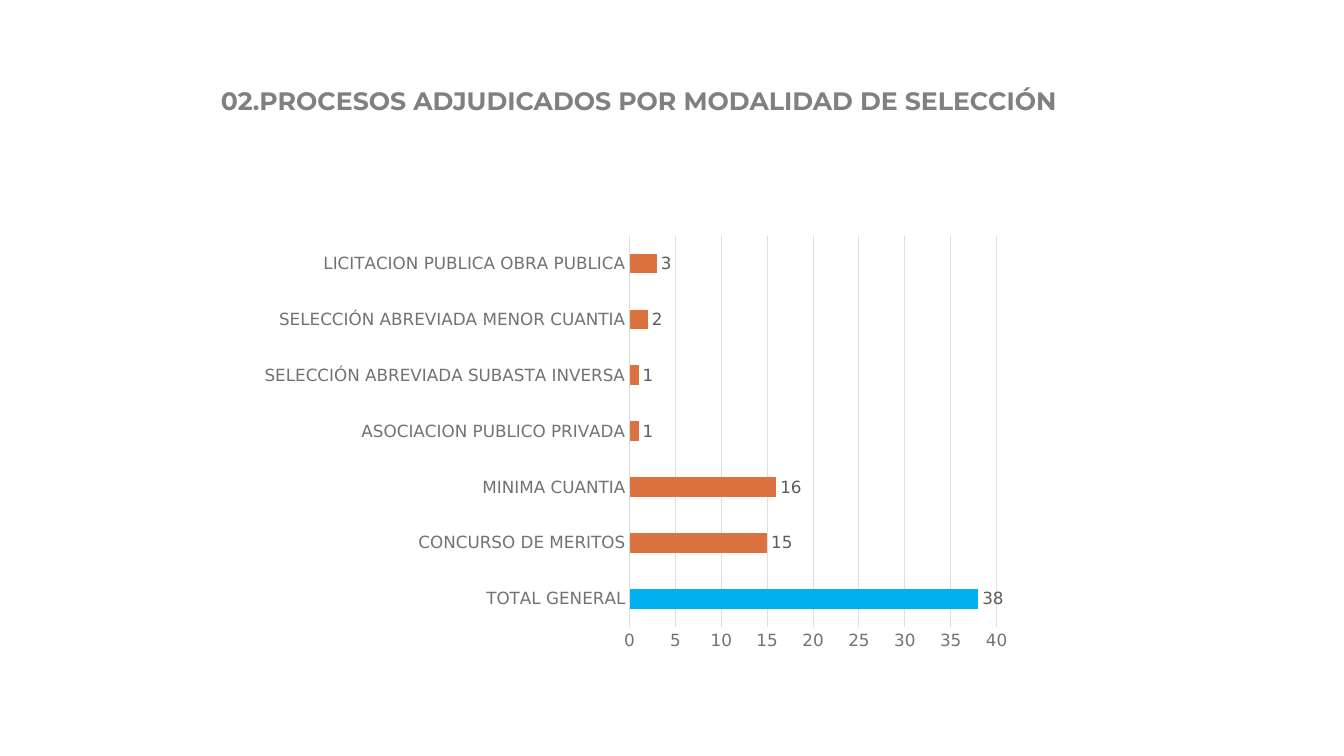
from lxml import etree
from pptx import Presentation
from pptx.chart.data import CategoryChartData
from pptx.dml.color import RGBColor
from pptx.enum.chart import XL_CHART_TYPE, XL_LABEL_POSITION, XL_TICK_MARK
from pptx.enum.text import MSO_ANCHOR, MSO_AUTO_SIZE, PP_ALIGN
from pptx.oxml.ns import qn
from pptx.util import Cm, Pt

TITLE_GREY = RGBColor(0x80, 0x80, 0x80)
AXIS_GREY = RGBColor(0x72, 0x72, 0x72)
LABEL_GREY = RGBColor(0x5C, 0x5C, 0x5C)
CHART_TEXT = RGBColor(0x26, 0x26, 0x26)
GRID_GREY = RGBColor(0xDE, 0xDE, 0xDE)
ORANGE = RGBColor(0xDC, 0x72, 0x40)
BLUE = RGBColor(0x00, 0xB0, 0xF0)

AWARDED = {
    "TOTAL GENERAL": 38,
    "CONCURSO DE MERITOS": 15,
    "MINIMA CUANTIA": 16,
    "ASOCIACION PUBLICO PRIVADA": 1,
    "SELECCIÓN ABREVIADA SUBASTA INVERSA": 1,
    "SELECCIÓN ABREVIADA MENOR CUANTIA": 2,
    "LICITACION PUBLICA OBRA PUBLICA": 3,
}


class SlideBuilder:
    title_font = "Montserrat"
    chart_font = "DejaVu Sans"

    def __init__(self, slide):
        self.slide = slide

    def style_font(self, font, name, size, color, bold=False):
        font.name = name
        font.size = Pt(size)
        font.bold = bold
        font.color.rgb = color

    def style_line(self, line):
        line.color.rgb = GRID_GREY
        line.width = Pt(0.75)

    def add_title(self, text, left, top, width, height):
        title = self.slide.shapes.title
        title.left, title.top = Cm(left), Cm(top)
        title.width, title.height = Cm(width), Cm(height)
        frame = title.text_frame
        frame.word_wrap = True
        frame.auto_size = MSO_AUTO_SIZE.SHAPE_TO_FIT_TEXT
        frame.vertical_anchor = MSO_ANCHOR.TOP
        paragraph = frame.paragraphs[0]
        paragraph.alignment = PP_ALIGN.LEFT
        run = paragraph.add_run()
        run.text = text
        self.style_font(run.font, self.title_font, 18, TITLE_GREY, bold=True)

    def add_bar_chart(self, values, left, top, width, height):
        data = CategoryChartData()
        data.categories = list(values)
        data.add_series("Series 1", list(values.values()))
        chart = self.slide.shapes.add_chart(
            XL_CHART_TYPE.BAR_CLUSTERED, Cm(left), Cm(top), Cm(width), Cm(height), data
        ).chart
        chart.has_title = False
        chart.has_legend = False
        self.style_font(chart.font, self.chart_font, 10, CHART_TEXT)
        self.style_axes(chart)
        self.style_bars(chart.plots[0])
        self.place_plot(chart, x=0.49, y=0.02, w=0.475, h=0.905)

    def style_axes(self, chart):
        for axis in (chart.category_axis, chart.value_axis):
            axis.major_tick_mark = XL_TICK_MARK.NONE
            axis.minor_tick_mark = XL_TICK_MARK.NONE
            self.style_font(axis.tick_labels.font, self.chart_font, 12, AXIS_GREY)
        self.style_line(chart.category_axis.format.line)
        value_axis = chart.value_axis
        value_axis.minimum_scale, value_axis.maximum_scale = 0, 40
        value_axis.major_unit = 5
        value_axis.format.line.fill.background()
        value_axis.has_major_gridlines = True
        self.style_line(value_axis.major_gridlines.format.line)

    def style_bars(self, plot):
        plot.gap_width = 182
        plot.vary_by_categories = False
        series = plot.series[0]
        total = series.points[0]
        for bar, color in ((series, ORANGE), (total, BLUE)):
            bar.format.fill.solid()
            bar.format.fill.fore_color.rgb = color
        labels = series.data_labels
        labels.show_value = True
        labels.position = XL_LABEL_POSITION.OUTSIDE_END
        self.style_font(labels.font, self.chart_font, 12, LABEL_GREY)

    def place_plot(self, chart, **fractions):
        """Fix the inner plot area as fractions of the chart frame."""
        plot_area = chart.element.find(".//" + qn("c:plotArea"))
        layout = plot_area.find(qn("c:layout"))
        if layout is None:
            layout = etree.Element(qn("c:layout"))
            plot_area.insert(0, layout)
        manual = etree.SubElement(layout, qn("c:manualLayout"))
        settings = {"layoutTarget": "inner", "xMode": "edge", "yMode": "edge", **fractions}
        for tag, value in settings.items():
            etree.SubElement(manual, qn("c:" + tag)).set("val", str(value))


def main():
    presentation = Presentation()
    presentation.slide_width = Cm(33.87)
    presentation.slide_height = Cm(19.05)
    title_only = presentation.slide_layouts[5]
    builder = SlideBuilder(presentation.slides.add_slide(title_only))
    builder.add_title(
        "02.PROCESOS ADJUDICADOS POR MODALIDAD DE SELECCIÓN", 5.31, 2.03, 22.45, 1.02
    )
    builder.add_bar_chart(AWARDED, 6.32, 5.72, 19.48, 10.9)
    presentation.save("out.pptx")


if __name__ == "__main__":
    main()
